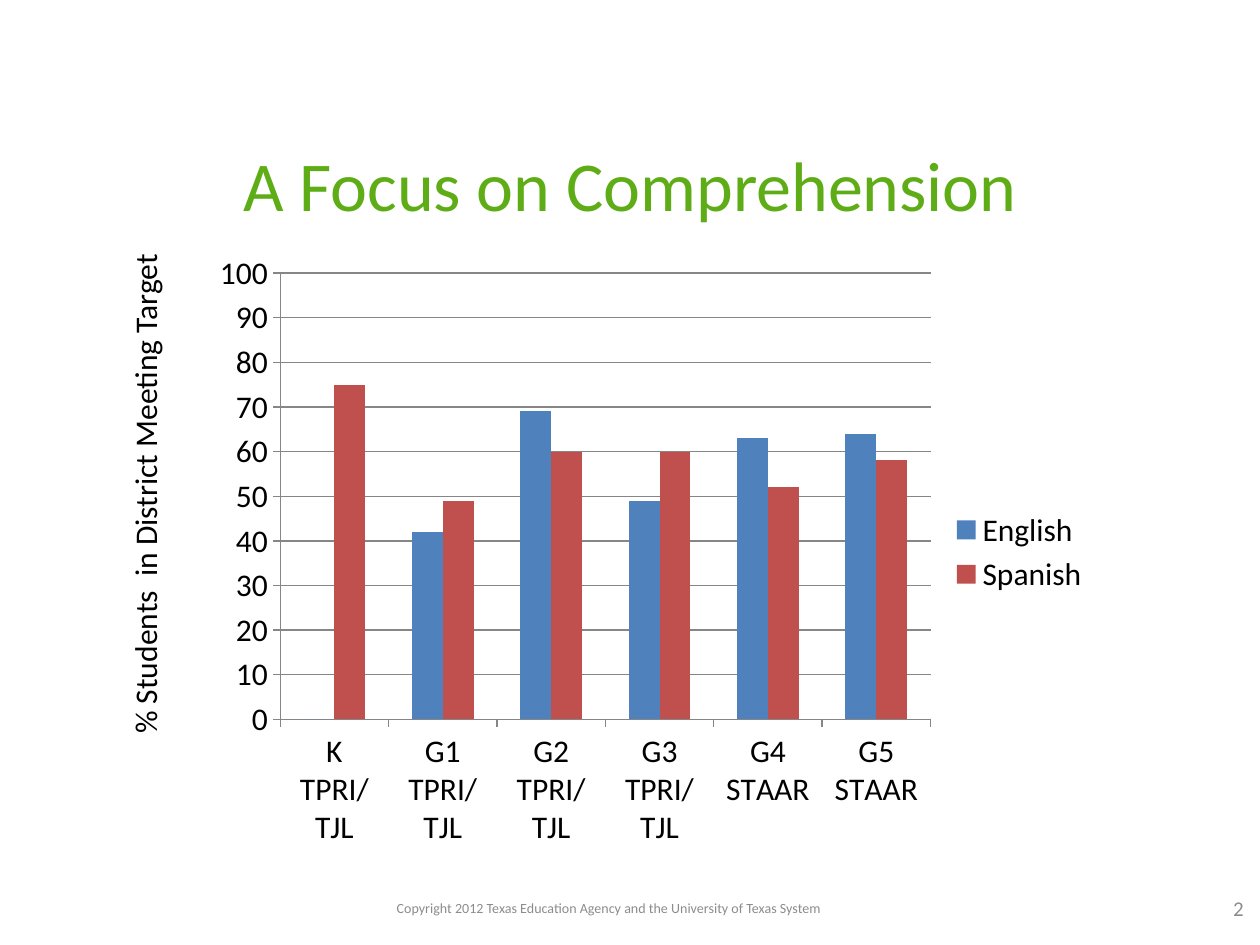
from lxml.etree import SubElement
from pptx import Presentation
from pptx.chart.data import CategoryChartData
from pptx.dml.color import RGBColor
from pptx.enum.chart import XL_CHART_TYPE as ChartType, XL_LEGEND_POSITION as LegendPos, XL_TICK_MARK as Tick
from pptx.enum.text import MSO_ANCHOR as Anchor, PP_ALIGN as Align
from pptx.oxml.ns import qn
from pptx.util import Cm, Pt

FONT = "Calibri"
BLACK, GREY, GREEN, AXIS = "000000", "8C8C8C", "5EAD16", "868686"
TITLE = "A Focus on Comprehension"
AXIS_LABEL = "% Students  in District Meeting Target"
COPYRIGHT = "Copyright 2012 Texas Education Agency and the University of Texas System"
GRADES = ["K TPRI/TJL", "G1 TPRI/TJL", "G2 TPRI/TJL", "G3 TPRI/TJL", "G4 STAAR", "G5 STAAR"]
SERIES = [
    ("English", (0, 42, 69, 49, 63, 64), "4F81BD"),
    ("Spanish", (75, 49, 60, 60, 52, 58), "C0504D"),
]
PLOT = {"x": 0.09, "y": 0.05, "w": 0.72, "h": 0.72}


def rgb(color):
    """Turn a hex string into a colour."""
    return RGBColor.from_string(color)


def style(font, size, color):
    """Give a font its face, size and colour."""
    font.name, font.size = FONT, Pt(size)
    font.color.rgb = rgb(color)


def write(sp, text, size, color, align=Align.CENTER, anchor=Anchor.MIDDLE):
    """Write one run of text into a shape."""
    tf = sp.text_frame
    tf.word_wrap, tf.vertical_anchor = True, anchor
    p = tf.paragraphs[0]
    p.alignment = align
    r = p.add_run()
    r.text = text
    style(r.font, size, color)


def place_plot(chart):
    """Fix the inner plot area inside the chart."""
    area = chart._chartSpace.chart.plotArea
    for old in area.findall(qn("c:layout")):
        area.remove(old)
    layout = SubElement(area, qn("c:layout"))
    area.insert(0, layout)
    manual = SubElement(layout, qn("c:manualLayout"))
    values = {"layoutTarget": "inner", "xMode": "edge", "yMode": "edge", **PLOT}
    for tag, value in values.items():
        SubElement(manual, qn(f"c:{tag}")).set("val", str(value))


def add_scores(s):
    """Add the clustered column chart of both languages."""
    data = CategoryChartData()
    data.categories = GRADES
    for name, scores, _ in SERIES:
        data.add_series(name, scores)
    chart = s.shapes.add_chart(ChartType.COLUMN_CLUSTERED, Cm(4.01), Cm(4.88),
                               Cm(18.21), Cm(12.5), data).chart
    style(chart.font, 18, BLACK)
    chart.has_title = False
    chart.has_legend = True
    chart.legend.position = LegendPos.RIGHT
    chart.legend.include_in_layout = False
    plot = chart.plots[0]
    plot.gap_width, plot.overlap, plot.vary_by_categories = 150, 0, False
    for series, (_, _, color) in zip(plot.series, SERIES):
        series.format.fill.solid()
        series.format.fill.fore_color.rgb = rgb(color)
    val = chart.value_axis
    val.minimum_scale, val.maximum_scale, val.major_unit = 0, 100, 10
    val.has_major_gridlines = True
    for axis in (val, chart.category_axis):
        axis.major_tick_mark = Tick.OUTSIDE
    for part in (val, val.major_gridlines, chart.category_axis):
        part.format.line.color.rgb = rgb(AXIS)
        part.format.line.width = Pt(0.75)
    place_plot(chart)


def main():
    """Build and save the slide."""
    prs = Presentation()
    prs.slide_width, prs.slide_height = Cm(25.4), Cm(19.05)
    s = prs.slides.add_slide(prs.slide_layouts[5])
    title = s.shapes.title
    title.left, title.top, title.width, title.height = Cm(1.27), Cm(2.64), Cm(22.86), Cm(2.13)
    write(title, TITLE, 40, GREEN)
    footer = s.shapes.add_textbox(Cm(5.08), Cm(17.98), Cm(14.4), Cm(0.64))
    write(footer, COPYRIGHT, 8, GREY)
    number = s.shapes.add_textbox(Cm(24.33), Cm(17.96), Cm(1.27), Cm(0.69))
    write(number, "2", 12, GREY)
    add_scores(s)
    label = s.shapes.add_textbox(Cm(2.41), Cm(4.45), Cm(1.27), Cm(10.59))
    write(label, AXIS_LABEL, 18, BLACK, Align.LEFT, Anchor.TOP)
    label.text_frame._txBody.bodyPr.set("vert", "vert270")
    prs.save("out.pptx")


if __name__ == "__main__":
    main()
